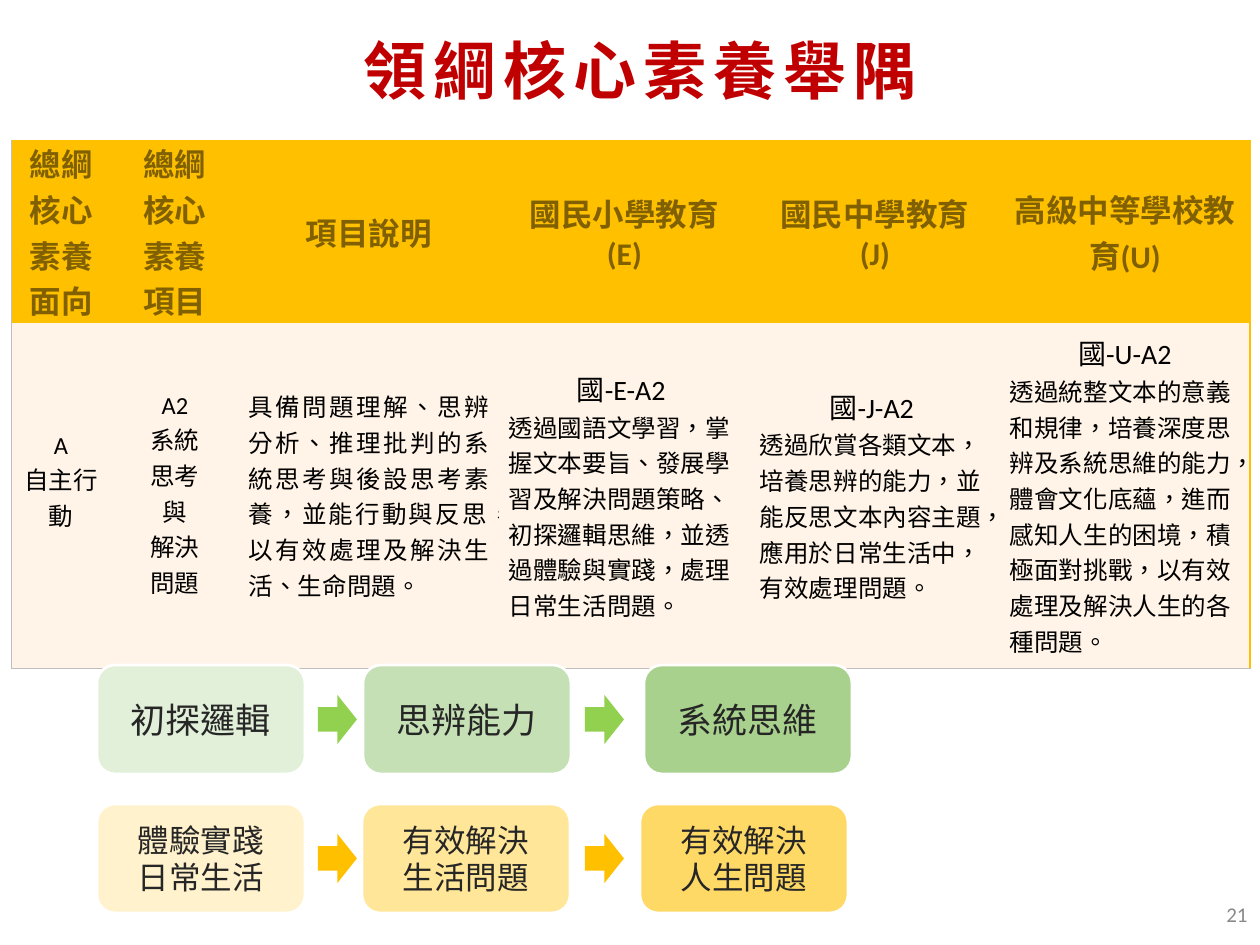
"""Build a slide of core competency examples: a table above two chains of steps."""
import pptx
import pptx.chart.data
import pptx.dml.color
import pptx.enum.lang
import pptx.enum.shapes
import pptx.enum.text
import pptx.oxml
import pptx.oxml.ns
import pptx.util
from lxml import etree

SCALE = 914400 // 126
CJK = "Noto Sans CJK SC"
ALIGN = pptx.enum.text.PP_ALIGN
ANCHOR = pptx.enum.text.MSO_ANCHOR
SHAPE = pptx.enum.shapes.MSO_SHAPE
TAIWAN = pptx.enum.lang.MSO_LANGUAGE_ID.TAIWAN if hasattr(
    pptx.enum.lang.MSO_LANGUAGE_ID, "TAIWAN") else None
NO_STYLE = "{2D5ABB26-0587-4C30-8999-92F81FD0307C}"
GOLD, CREAM, GRAY = "FFC000", "FFF4E7", "BFBFBF"

TITLE = {"name": CJK, "size": 36, "bold": True, "color": "C00000"}
HEAD = {"name": "Calibri", "size": 18, "bold": True, "color": "806000"}
CODE = {"name": "Calibri", "size": 16, "bold": False, "color": "000000"}
BODY = {**CODE, "size": 14}
STEP = {"name": CJK, "size": 20, "color": "262626"}
STEP_SMALL = {**STEP, "size": 18}
NUMBER = {"name": "Calibri", "size": 12, "color": "898989"}

COLUMNS = [100, 128, 260, 251, 250, 250]
ROWS = [183, 345]
HEADERS = [
    ["總綱核心素養面向"],
    ["總綱", "核心", "素養", "項目"],
    ["項目說明"],
    ["國民小學教育", "(E)"],
    ["國民中學教育", "(J)"],
    ["高級中等學校教育(U)"],
]
ASPECT = ["A", "自主行動"]
ITEM = ["A2", "系統", "思考", "與", "解決", "問題"]
DESCRIPTION = "具備問題理解、思辨分析、推理批判的系統思考與後設思考素養，並能行動與反思，以有效處理及解決生活、生命問題。"
STAGES = [
    ("國-E-A2 ", "透過國語文學習，掌握文本要旨、發展學習及解決問題策略、初探邏輯思維，並透過體驗與實踐，處理日常生活問題。"),
    ("國-J-A2 ", "透過欣賞各類文本，培養思辨的能力，並能反思文本內容主題，應用於日常生活中，有效處理問題。"),
    ("國-U-A2", "透過統整文本的意義和規律，培養深度思辨及系統思維的能力，體會文化底蘊，進而感知人生的困境，積極面對挑戰，以有效處理及解決人生的各種問題。"),
]
CHAINS = [
    {"top": 665, "arrow": "92D050", "style": STEP, "steps": [
        (97, "E2F0D9", ["初探邏輯"]),
        (363, "C5E0B4", ["思辨能力"]),
        (644, "A9D18E", ["系統思維"])]},
    {"top": 804, "arrow": GOLD, "style": STEP_SMALL, "steps": [
        (97, "FFF2CC", ["體驗實踐", "日常生活"]),
        (362, "FFE699", ["有效解決", "生活問題"]),
        (640, "FFD966", ["有效解決", "人生問題"])]},
]
ARROW_LEFTS = [318, 585]
STEP_SIZE, ARROW_SIZE, ARROW_DROP = (208, 109), (39, 49), 30


def px(*lengths):
    return [pptx.util.Emu(length * SCALE) for length in lengths]


def rgb(value):
    return pptx.dml.color.RGBColor.from_string(value)


def paint(target, color):
    target.fill.solid()
    target.fill.fore_color.rgb = rgb(color)


def write(frame, lines):
    """Write (text, format, alignment) lines and return the paragraphs."""
    frame.word_wrap = True
    for index, (text, style, align) in enumerate(lines):
        para = frame.add_paragraph() if index else frame.paragraphs[0]
        para.alignment = align
        span = para.add_run()
        span.text = text
        for key, value in style.items():
            if key == "color":
                span.font.color.rgb = rgb(value)
            else:
                setattr(span.font, key, pptx.util.Pt(value) if key == "size" else value)
        span.font._element.set("lang", "zh-TW")
        east = etree.SubElement(span.font._element, pptx.oxml.ns.qn("a:ea"))
        east.set("typeface", CJK)
    return frame.paragraphs


def centered(texts, style):
    return [(text, style, ALIGN.CENTER) for text in texts]


def add_text(page, place, line):
    box = page.shapes.add_textbox(*px(*place))
    box.text_frame.vertical_anchor = ANCHOR.MIDDLE
    return write(box.text_frame, [line])[0]


def add_border(cell, side, color, width):
    line = etree.SubElement(
        cell._tc.get_or_add_tcPr(), pptx.oxml.ns.qn("a:ln" + side), w=str(pptx.util.Pt(width)))
    fill = etree.SubElement(line, pptx.oxml.ns.qn("a:solidFill"))
    etree.SubElement(fill, pptx.oxml.ns.qn("a:srgbClr"), val=color)


def add_competency_table(page):
    body = [centered(ASPECT, BODY), centered(ITEM, BODY), [(DESCRIPTION, BODY, ALIGN.JUSTIFY)]]
    body += [[(code, CODE, ALIGN.CENTER), (text, BODY, ALIGN.LEFT)] for code, text in STAGES]
    contents = [[centered(texts, HEAD) for texts in HEADERS], body]
    frame = page.shapes.add_table(
        len(ROWS), len(COLUMNS), *px(11, 140, sum(COLUMNS), sum(ROWS)))
    table = frame.table
    table.first_row = table.horz_banding = False
    table._tbl.tblPr.find(pptx.oxml.ns.qn("a:tableStyleId")).text = NO_STYLE
    for column, width in zip(table.columns, COLUMNS):
        column.width = px(width)[0]
    for r, (height, color) in enumerate(zip(ROWS, (GOLD, CREAM))):
        table.rows[r].height = px(height)[0]
        for c, lines in enumerate(contents[r]):
            cell = table.cell(r, c)
            cell.margin_left, cell.margin_right, cell.margin_top, cell.margin_bottom = px(10, 10, 0, 0)
            cell.vertical_anchor = ANCHOR.MIDDLE
            if c == 0:
                add_border(cell, "L", GRAY, 0.5)
            if c == len(COLUMNS) - 1:
                add_border(cell, "R", GOLD, 1)
            if r:
                add_border(cell, "B", GRAY, 0.5)
            paint(cell, color)
            write(cell.text_frame, lines)
    aspect = table.cell(1, 0)
    aspect.vertical_anchor = ANCHOR.TOP
    aspect.margin_left, aspect.margin_right, aspect.margin_top = px(12, 12, 108)


def add_block(page, kind, place, color):
    block = page.shapes.add_shape(kind, *px(*place))
    block.shadow.inherit = False
    paint(block, color)
    block.line.fill.background()
    return block


def add_chain(page, chain):
    for left, color, texts in chain["steps"]:
        step = add_block(page, SHAPE.ROUNDED_RECTANGLE, (left, chain["top"], *STEP_SIZE), color)
        step.line.color.rgb = rgb("FFFFFF")
        step.line.width = pptx.util.Pt(1.5)
        step.text_frame.vertical_anchor = ANCHOR.MIDDLE
        write(step.text_frame, centered(texts, chain["style"]))
    for left in ARROW_LEFTS:
        place = (left, chain["top"] + ARROW_DROP, *ARROW_SIZE)
        add_block(page, SHAPE.RIGHT_ARROW, place, chain["arrow"])


def main():
    deck = pptx.Presentation()
    deck.slide_width, deck.slide_height = px(1260, 945)
    page = deck.slides.add_slide(deck.slide_layouts[6])
    title = add_text(page, (56, 18, 1168, 113), ("領綱核心素養舉隅", TITLE, ALIGN.CENTER))
    title.line_spacing = 0.9
    title.runs[0].font._element.set("spc", "400")
    add_competency_table(page)
    for chain in CHAINS:
        add_chain(page, chain)
    add_text(page, (976, 889, 284, 50), ("21", NUMBER, ALIGN.RIGHT))
    deck.save("out.pptx")


if __name__ == "__main__":
    main()
